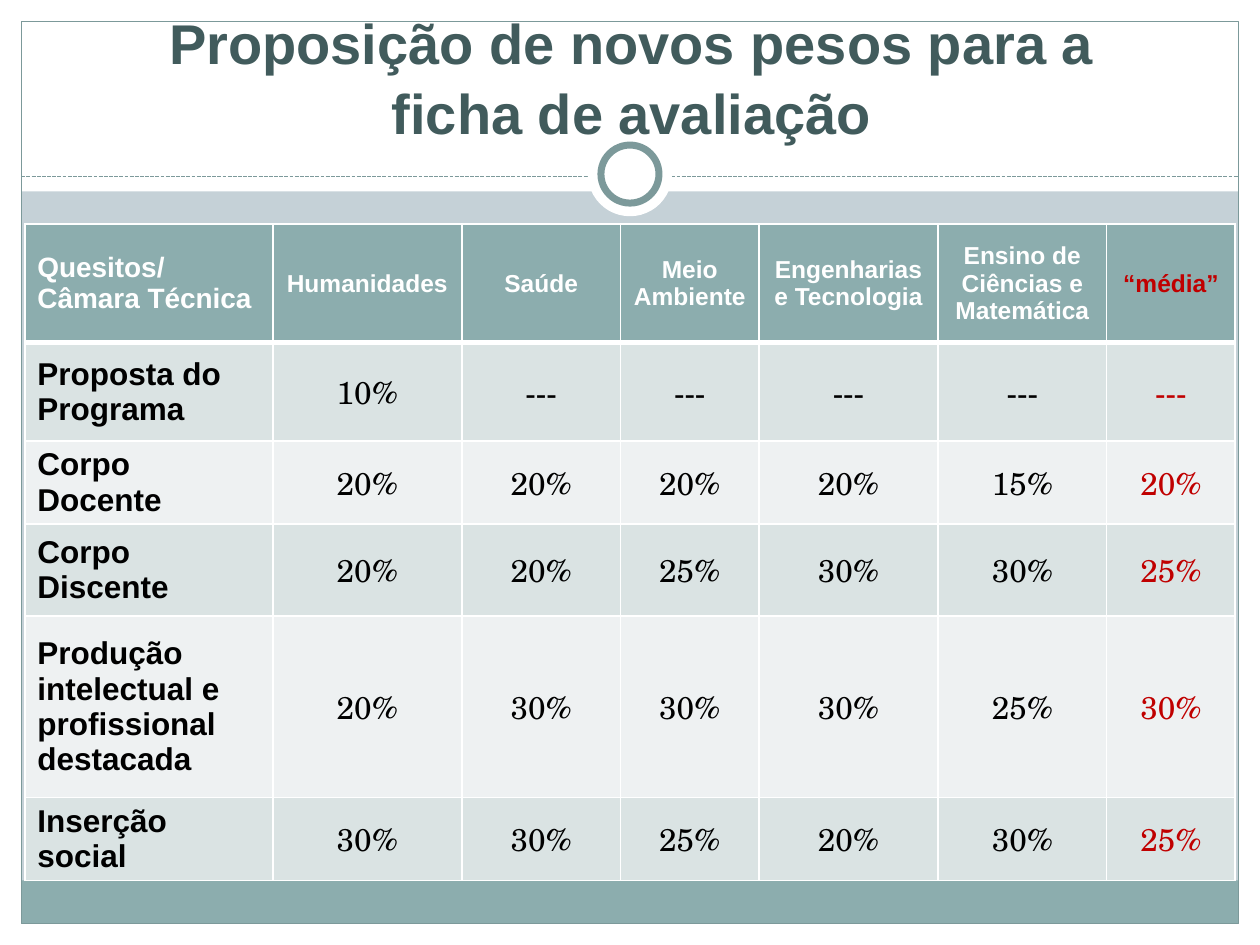
import pptx
import pptx.util
import pptx.dml.color
import pptx.enum.dml
import pptx.enum.shapes
import pptx.enum.text
import pptx.oxml.ns
from dataclasses import dataclass
from lxml import etree

Cm = pptx.util.Cm
Pt = pptx.util.Pt
Shapes = pptx.enum.shapes.MSO_SHAPE
Align = pptx.enum.text.PP_ALIGN
Anchor = pptx.enum.text.MSO_ANCHOR
qualified = pptx.oxml.ns.qn


@dataclass(frozen=True)
class Theme:
    background: str = "C5D1D7"
    white: str = "FFFFFF"
    accent: str = "8CADAE"
    outline: str = "7C999A"
    title: str = "415B5C"
    text: str = "000000"
    highlight: str = "C00000"
    bands: tuple = ("DAE3E3", "EEF1F2")
    font: str = "Arial"
    number_font: str = "TeX Gyre Schola"
    title_size: int = 32
    body_size: int = 18
    corner_size: int = 16
    header_size: int = 14


def rgb(value):
    return pptx.dml.color.RGBColor.from_string(value)


class SlideBuilder:
    def __init__(self, slide, theme):
        self.slide = slide
        self.theme = theme
        slide.background.fill.solid()
        slide.background.fill.fore_color.rgb = rgb(theme.background)

    def shape(self, kind, left, top, width, height, fill=None, line=None, line_width=0.75):
        shape = self.slide.shapes.add_shape(kind, Cm(left), Cm(top), Cm(width), Cm(height))
        shape.shadow.inherit = False
        if fill:
            shape.fill.solid()
            shape.fill.fore_color.rgb = rgb(fill)
        else:
            shape.fill.background()
        if line:
            shape.line.color.rgb = rgb(line)
            shape.line.width = Pt(line_width)
        else:
            shape.line.fill.background()

    def dashed_line(self, left, right, top):
        connector = self.slide.shapes.add_connector(
            pptx.enum.shapes.MSO_CONNECTOR.STRAIGHT, Cm(left), Cm(top), Cm(right), Cm(top))
        connector.line.color.rgb = rgb(self.theme.outline)
        connector.line.width = Pt(0.75)
        connector.line.dash_style = pptx.enum.dml.MSO_LINE.SQUARE_DOT
        etree.SubElement(connector.element.spPr, qualified("a:effectLst"))

    def format_text(self, text_frame, size, color, font, bold, alignment):
        for paragraph in text_frame.paragraphs:
            paragraph.alignment = alignment
            for run in paragraph.runs:
                run.font.size = Pt(size)
                run.font.name = font
                run.font.bold = bold
                run.font.color.rgb = rgb(color)

    def title(self, text, left, top, width, height):
        title = self.slide.shapes.title
        title.left, title.top, title.width, title.height = map(Cm, (left, top, width, height))
        title.element.getparent().append(title.element)
        title.text_frame.text = text
        title.text_frame.word_wrap = True
        title.text_frame.auto_size = pptx.enum.text.MSO_AUTO_SIZE.NONE
        title.text_frame.vertical_anchor = Anchor.BOTTOM
        title.text_frame.paragraphs[0].line_spacing = 1.05
        self.format_text(title.text_frame, self.theme.title_size, self.theme.title,
                         self.theme.font, True, Align.CENTER)

    def cell_borders(self, cell, widths):
        properties = cell._tc.get_or_add_tcPr()
        for side, width in widths.items():
            line = etree.SubElement(properties, qualified(f"a:ln{side}"), w=str(Pt(width)))
            fill = etree.SubElement(line, qualified("a:solidFill"))
            etree.SubElement(fill, qualified("a:srgbClr"), val=self.theme.white)

    def cell(self, cell, text, row, column, last_column):
        theme = self.theme
        header, label = row == 0, column == 0
        self.cell_borders(cell, {"L": 1, "R": 1, "T": 3 if row == 1 else 1, "B": 3 if header else 1})
        cell.fill.solid()
        cell.fill.fore_color.rgb = rgb(theme.accent if header else theme.bands[(row - 1) % 2])
        cell.vertical_anchor = Anchor.MIDDLE
        cell.text_frame.text = text
        if header:
            size = theme.corner_size if label else theme.header_size
        else:
            size = theme.body_size
        color = theme.white if header else theme.text
        if column == last_column:
            color = theme.highlight
        font = theme.font if header or label else theme.number_font
        self.format_text(cell.text_frame, size, color, font, header or label,
                         Align.LEFT if label else Align.CENTER)

    def table(self, rows, left, top, column_widths, row_heights):
        table = self.slide.shapes.add_table(
            len(rows), len(column_widths), Cm(left), Cm(top),
            Cm(sum(column_widths)), Cm(sum(row_heights))).table
        for column, width in zip(table.columns, column_widths):
            column.width = Cm(width)
        for row, height in zip(table.rows, row_heights):
            row.height = Cm(height)
        for row, texts in enumerate(rows):
            for column, text in enumerate(texts):
                self.cell(table.cell(row, column), text, row, column, len(texts) - 1)


WEIGHTS = [
    ["Quesitos/\nCâmara Técnica", "Humanidades", "Saúde", "Meio Ambiente",
     "Engenharias e Tecnologia", "Ensino de Ciências e Matemática", "“média”"],
    ["Proposta do Programa", "10%", "---", "---", "---", "---", "---"],
    ["Corpo Docente", "20%", "20%", "20%", "20%", "15%", "20%"],
    ["Corpo Discente", "20%", "20%", "25%", "30%", "30%", "25%"],
    ["Produção intelectual e profissional destacada", "20%", "30%", "30%", "30%", "25%", "30%"],
    ["Inserção social", "30%", "30%", "25%", "20%", "30%", "25%"],
]


def main():
    presentation = pptx.Presentation()
    width, height, margin = 25.4, 19.05, 0.43
    presentation.slide_width, presentation.slide_height = Cm(width), Cm(height)
    theme = Theme()
    builder = SlideBuilder(presentation.slides.add_slide(presentation.slide_layouts[5]), theme)

    inner_width, inner_height = width - 2 * margin, height - 2 * margin
    for frame in (
        (0, height - margin, width, margin),
        (0, 0, width, 3.86),
        (0, 0, margin, height),
        (width - margin, 0, margin, height),
    ):
        builder.shape(Shapes.RECTANGLE, *frame, fill=theme.white)
    builder.shape(Shapes.RECTANGLE, margin, 17.75, inner_width, 0.87, fill=theme.accent)
    builder.shape(Shapes.RECTANGLE, margin, margin, inner_width, inner_height, line=theme.outline)
    builder.dashed_line(margin, width - margin, 3.56)
    for diameter, outline in ((1.7, None), (1.17, theme.outline)):
        builder.shape(Shapes.OVAL, (width - diameter) / 2, 3.51 - diameter / 2, diameter, diameter,
                      fill=theme.white, line=outline, line_width=4)

    builder.title("Proposição de novos pesos para a ficha de avaliação", 2.36, -0.1, 20.75, 3.17)
    builder.table(WEIGHTS, 0.5, 4.52,
                  column_widths=[5, 3.81, 3.2, 2.79, 3.61, 3.4, 2.59],
                  row_heights=[2.39, 1.98, 1.67, 1.85, 3.66, 1.67])
    presentation.save("out.pptx")


if __name__ == "__main__":
    main()
